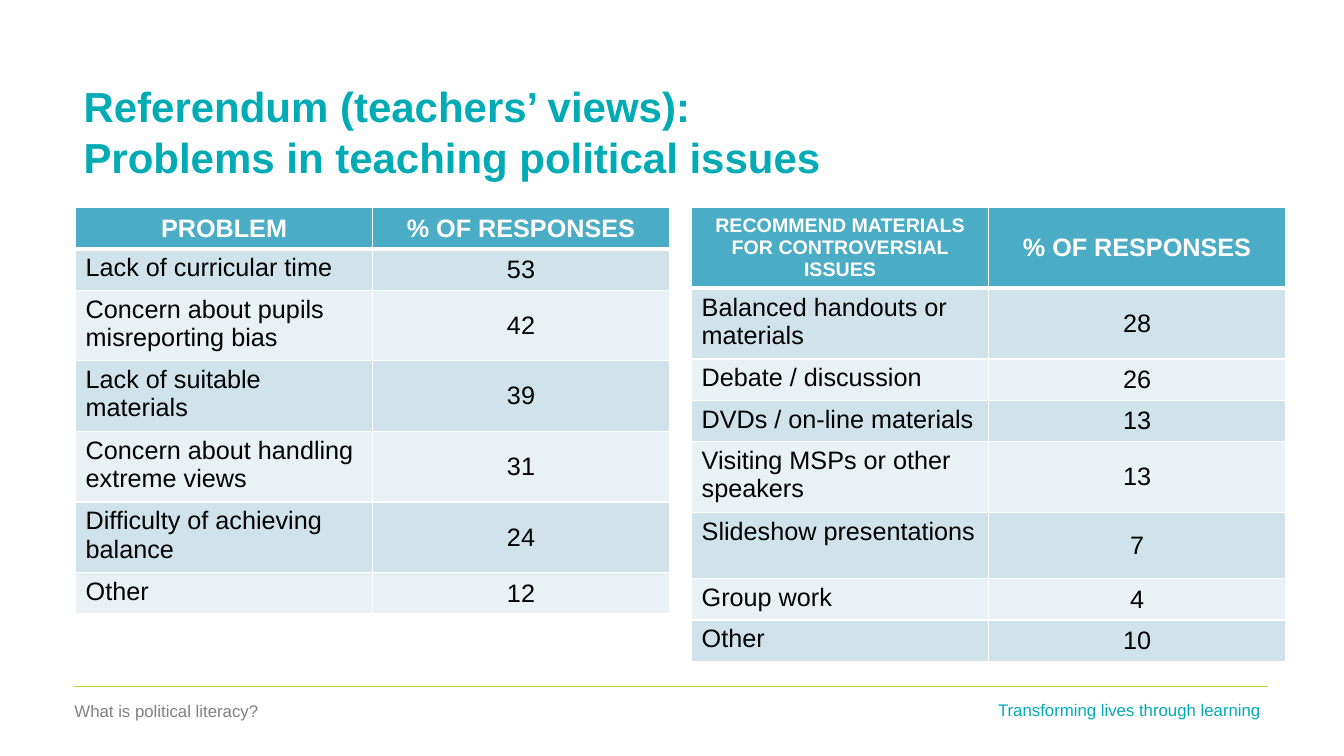
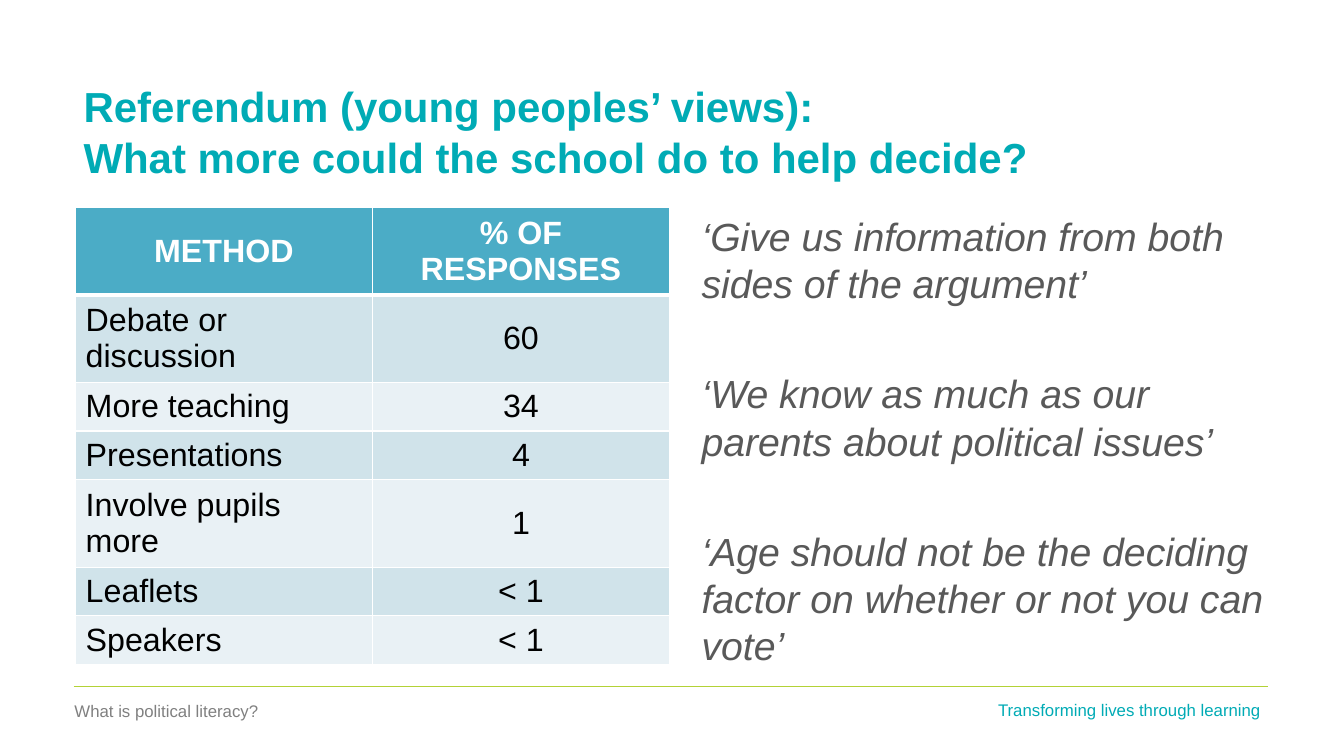
from dataclasses import dataclass

from lxml import etree
from pptx import Presentation
from pptx.dml import color
from pptx.enum import shapes, text
from pptx.oxml import ns
from pptx.util import Inches, Pt

WIDTH, HEIGHT = 13.33, 7.5
COLOURS = {
    "teal": "00ABB5",
    "lime": "B3D236",
    "grey": "808080",
    "quote": "595959",
    "header": "4BACC6",
    "band_dark": "D0E3EA",
    "band_light": "E9F1F5",
    "white": "FFFFFF",
    "black": "000000",
}
FONT = "Arial"
CONTENT_TOP = 2.06
PANEL_WIDTH = 5.89
PANEL_PITCH = 6.11
PANEL_LEFTS = [0.75 + PANEL_PITCH * i for i in range(2)]
RULE_LEFT, RULE_RIGHT, RULE_TOP = 0.73, 12.58, 6.81


@dataclass
class Style:
    size: float
    colour: str
    bold: bool = False
    italic: bool = False
    align: text.PP_ALIGN = text.PP_ALIGN.LEFT


@dataclass
class Row:
    label: str
    value: str
    lines: int = 1


@dataclass
class Table:
    panel: int
    size: float
    header: Row
    rows: list[Row]
    label_size: float | None = None
    label_anchor: text.MSO_ANCHOR = text.MSO_ANCHOR.TOP


TITLE = Style(30, "teal", bold=True)
QUOTE = Style(28, "quote", italic=True)
FOOTERS = [
    ("What is political literacy?", 0.64, 6.9, Style(12, "grey")),
    ("Transforming lives through learning", 9.8, 6.89, Style(12, "teal")),
]

PROBLEMS = Table(0, 18, Row("PROBLEM", "% OF RESPONSES"), [
    Row("Lack of curricular time", "53"),
    Row("Concern about pupils misreporting bias", "42", 2),
    Row("Lack of suitable materials", "39", 2),
    Row("Concern about handling extreme views", "31", 2),
    Row("Difficulty of achieving balance", "24", 2),
    Row("Other", "12"),
])
MATERIALS = Table(
    1, 18,
    Row("RECOMMEND MATERIALS FOR CONTROVERSIAL ISSUES", "% OF RESPONSES", 3),
    [
        Row("Balanced handouts or materials", "28", 2),
        Row("Debate / discussion", "26"),
        Row("DVDs / on-line materials", "13"),
        Row("Visiting MSPs or other speakers", "13", 2),
        Row("Slideshow presentations", "7", 2),
        Row("Group work", "4"),
        Row("Other", "10"),
    ],
    label_size=14,
)
METHODS = Table(0, 23, Row("METHOD", "% OF RESPONSES", 2), [
    Row("Debate or discussion", "60", 2),
    Row("More teaching", "34"),
    Row("Presentations", "4"),
    Row("Involve pupils more", "1", 2),
    Row("Leaflets", "< 1"),
    Row("Speakers", "< 1"),
], label_anchor=text.MSO_ANCHOR.MIDDLE)
QUOTES = [
    "‘Give us information from both sides of the argument’",
    "‘We know as much as our parents about political issues’",
    "‘Age should not be the deciding factor on whether or not you can vote’",
]


def rgb(name: str) -> color.RGBColor:
    return color.RGBColor.from_string(COLOURS[name])


def write(p, content: str, style: Style) -> None:
    p.text = content
    p.alignment = style.align
    f = p.font
    f.name, f.size = FONT, Pt(style.size)
    f.bold, f.italic = style.bold, style.italic
    f.color.rgb = rgb(style.colour)


def add_text(s, box: tuple[float, float, float, float], items: list[str],
             style: Style, anchor=text.MSO_ANCHOR.TOP, gap: float = 0) -> None:
    tf = s.shapes.add_textbox(*map(Inches, box)).text_frame
    tf.word_wrap = True
    tf.vertical_anchor = anchor
    for i, item in enumerate(items):
        p = tf.add_paragraph() if i else tf.paragraphs[0]
        write(p, item, style)
        if i:
            p.space_before = Pt(gap)


def add_borders(cell, top: float, bottom: float) -> None:
    tc_pr = cell._tc.get_or_add_tcPr()
    for side, width in (("L", 1), ("R", 1), ("T", top), ("B", bottom)):
        ln = etree.SubElement(tc_pr, ns.qn(f"a:ln{side}"), w=str(Pt(width)))
        fill = etree.SubElement(ln, ns.qn("a:solidFill"))
        etree.SubElement(fill, ns.qn("a:srgbClr"), val=COLOURS["white"])


def row_height(lines: int, size: float) -> float:
    return max(0.41, round(0.1 + lines * size * 1.115 / 72, 2))


def add_results(s, data: Table) -> None:
    rows = [data.header, *data.rows]
    heights = [row_height(row.lines, data.size) for row in rows]
    heights[0] = row_height(data.header.lines, data.label_size or data.size)
    box = (PANEL_LEFTS[data.panel], CONTENT_TOP, PANEL_WIDTH, sum(heights))
    table = s.shapes.add_table(len(rows), 2, *map(Inches, box)).table
    table.first_row = table.horz_banding = False
    for i, row in enumerate(rows):
        table.rows[i].height = Inches(heights[i])
        head = i == 0
        band = "header" if head else "band_dark" if i % 2 else "band_light"
        for j, content in enumerate((row.label, row.value)):
            cell = table.cell(i, j)
            add_borders(cell, 3 if i == 1 else 1, 3 if head else 1)
            cell.fill.solid()
            cell.fill.fore_color.rgb = rgb(band)
            centred = head or j == 1
            cell.vertical_anchor = (text.MSO_ANCHOR.MIDDLE if centred
                                    else data.label_anchor)
            size = data.label_size if head and j == 0 else None
            write(cell.text_frame.paragraphs[0], content, Style(
                size or data.size, "white" if head else "black", bold=head,
                align=text.PP_ALIGN.CENTER if centred else text.PP_ALIGN.LEFT))


def add_slide(prs, title: str):
    s = prs.slides.add_slide(prs.slide_layouts[6])
    rule = s.shapes.add_connector(
        shapes.MSO_CONNECTOR.STRAIGHT,
        *map(Inches, (RULE_LEFT, RULE_TOP, RULE_RIGHT, RULE_TOP)))
    rule.line.color.rgb = rgb("lime")
    rule.line.width = Pt(0.75)
    etree.SubElement(rule._element.spPr, ns.qn("a:effectLst"))
    for content, left, top, style in FOOTERS:
        add_text(s, (left, top, 3.01, 0.3), [content], style)
    add_text(s, (RULE_LEFT, 0.91, RULE_RIGHT - RULE_LEFT, 0.78), [title],
             TITLE, text.MSO_ANCHOR.MIDDLE)
    return s


def main() -> None:
    prs = Presentation()
    prs.slide_width, prs.slide_height = Inches(WIDTH), Inches(HEIGHT)

    s = add_slide(prs, "Referendum (teachers’ views):\v"
                       "Problems in teaching political issues")
    for data in (PROBLEMS, MATERIALS):
        add_results(s, data)

    s = add_slide(prs, "Referendum (young peoples’ views):\v"
                       "What more could the school do to help decide?")
    add_results(s, METHODS)
    add_text(s, (PANEL_LEFTS[1], CONTENT_TOP, PANEL_WIDTH, 4.05), QUOTES,
             QUOTE, gap=45)

    prs.save("out.pptx")


if __name__ == "__main__":
    main()
